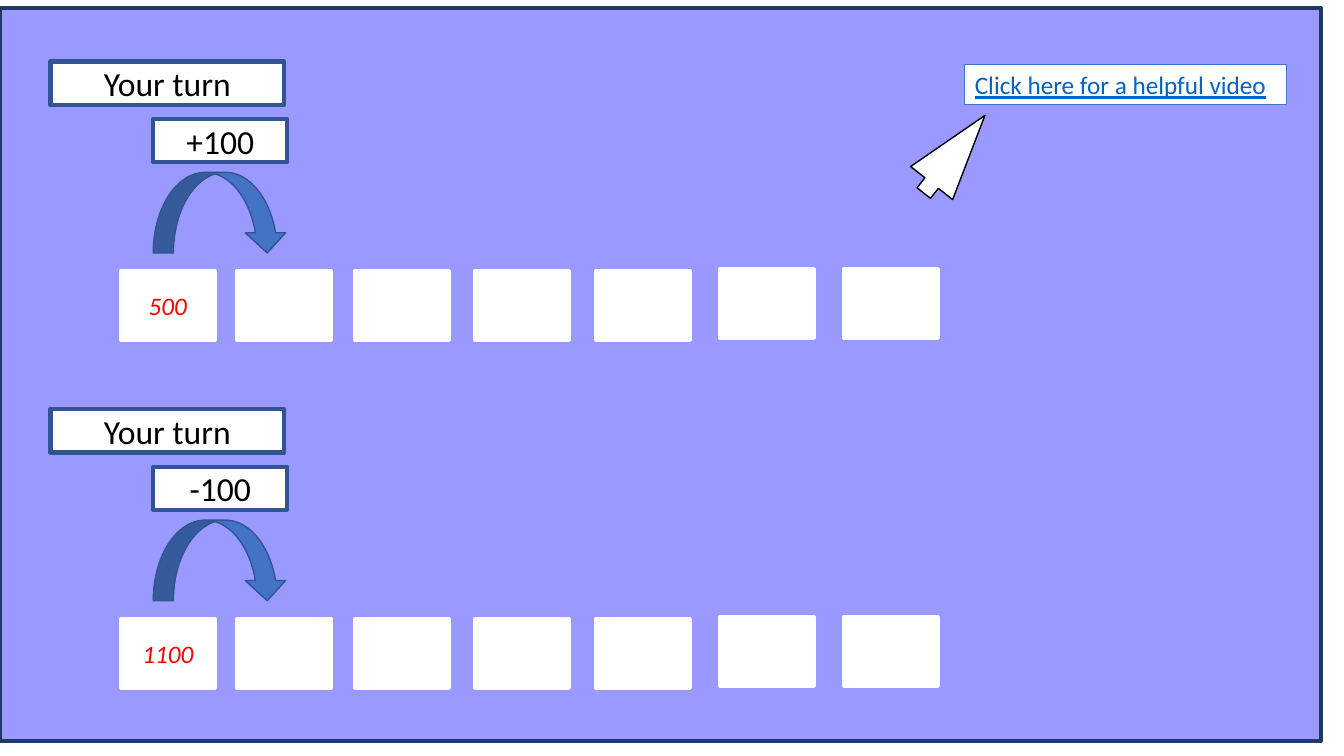
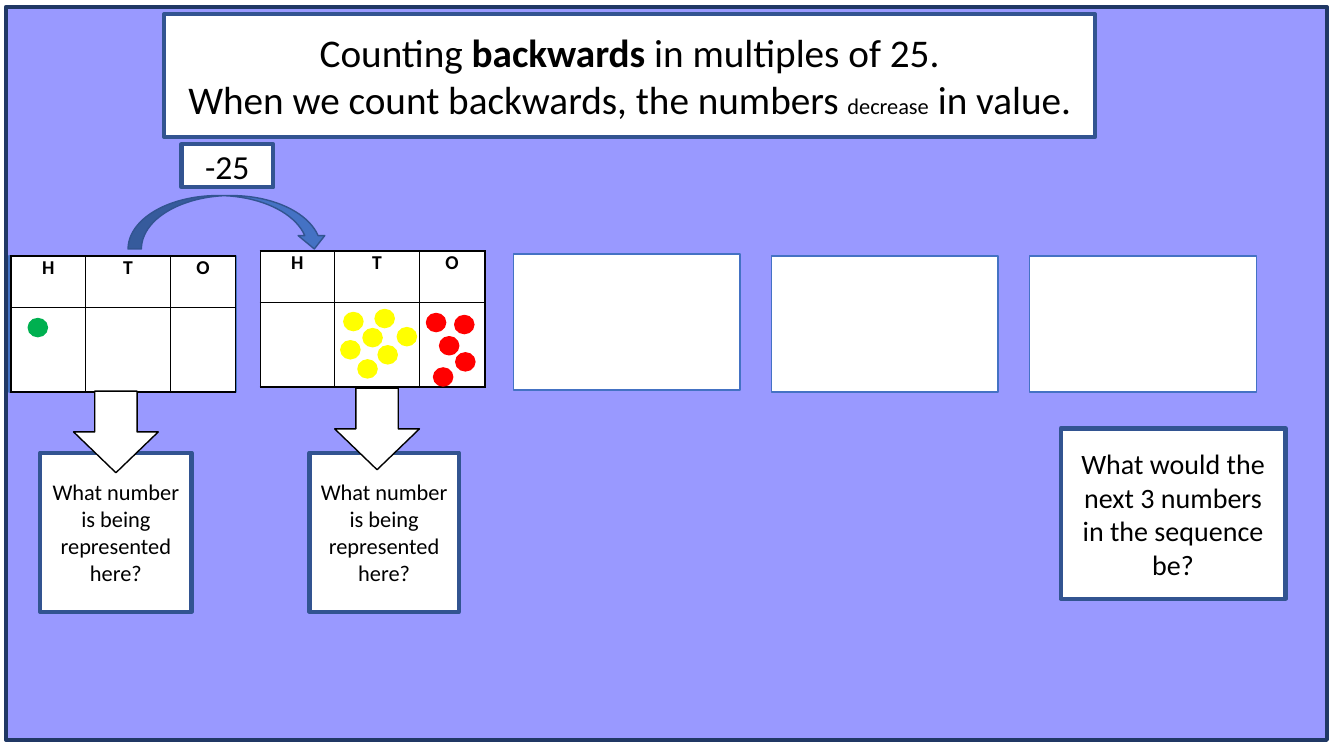
"""Build two slides on counting in steps, with boxes, arrows and place value charts."""
import pptx
import pptx.dml.color
import pptx.enum.shapes
import pptx.enum.text
import pptx.oxml
import pptx.oxml.ns
import pptx.util

Inches = pptx.util.Inches
Pt = pptx.util.Pt
Kind = pptx.enum.shapes.MSO_SHAPE
Align = pptx.enum.text.PP_ALIGN
Anchor = pptx.enum.text.MSO_ANCHOR
Size = pptx.enum.text.MSO_AUTO_SIZE


class Deck:
    """Hold the style and the current slide."""

    font = "Calibri"
    hues = {
        "back": "9999FF", "frame": "203864", "edge": "325491", "blue": "4472C4",
        "white": "FFFFFF", "black": "000000", "red": "FF0000", "yellow": "FFFF00",
        "green": "00B050", "link": "0563C1",
    }

    def __init__(self):
        self.show = pptx.Presentation()
        self.show.slide_width = Inches(13.33)
        self.show.slide_height = Inches(7.5)
        self.page = None

    def hue(self, name):
        return pptx.dml.color.RGBColor.from_string(self.hues[name])

    def slide(self, left, top, titled=False):
        layout = self.show.slide_layouts[5 if titled else 6]
        self.page = self.show.slides.add_slide(layout)
        self.shape(Kind.RECTANGLE, (left, top, 13.1, 7.27), "back", "frame", 3)

    def paint(self, item, fill, line, width):
        item.fill.solid()
        item.fill.fore_color.rgb = self.hue(fill)
        item.line.color.rgb = self.hue(line)
        item.line.width = Pt(width)

    def shape(self, kind, at, fill, line, width=1):
        item = self.page.shapes.add_shape(kind, *map(Inches, at))
        item.shadow.inherit = False
        self.paint(item, fill, line, width)
        return item

    def text(self, para, runs, size, color="black", align=Align.CENTER):
        para.alignment = align
        for words, look in runs:
            run = para.add_run()
            run.text = words
            font = run.font
            font.name = self.font
            font.size = Pt(look.get("size", size))
            font.bold = look.get("bold", False)
            font.italic = look.get("italic", False)
            font.underline = look.get("under", False)
            font.color.rgb = self.hue(color)

    def box(self, at, words="", size=24, line="edge", width=3, color="black", **look):
        item = self.shape(Kind.RECTANGLE, at, "white", line, width)
        if words:
            item.text_frame.word_wrap = True
            self.text(item.text_frame.paragraphs[0], [(words, look)], size, color)
        return item

    def title(self, at, lines, size):
        item = self.page.shapes.title
        self.page.shapes._spTree.append(item._element)
        item.left, item.top, item.width, item.height = map(Inches, at)
        self.paint(item, "white", "edge", 3)
        frame = item.text_frame
        frame.auto_size = Size.NONE
        frame.word_wrap = True
        frame.vertical_anchor = Anchor.MIDDLE
        for spot, runs in enumerate(lines):
            para = frame.add_paragraph() if spot else frame.paragraphs[0]
            self.text(para, runs, size)

    def link(self, at, words):
        item = self.box(at, line="blue", width=0.75)
        frame = item.text_frame
        frame.word_wrap = False
        frame.vertical_anchor = Anchor.TOP
        self.text(frame.paragraphs[0], [(words, {"under": True})], 18, "link", Align.LEFT)

    def hop(self, at, label, words):
        self.shape(Kind.CURVED_DOWN_ARROW, at, "blue", "edge")
        self.box(label, words)

    def arrow(self, at, turn=0, adjust=()):
        item = self.shape(Kind.DOWN_ARROW, at, "white", "black")
        item.rotation = turn
        for spot, value in enumerate(adjust):
            item.adjustments[spot] = value

    def border(self, cell):
        props = cell._tc.get_or_add_tcPr()
        space = pptx.oxml.ns.nsdecls("a")
        for spot, side in enumerate(("lnL", "lnR", "lnT", "lnB")):
            props.insert(spot, pptx.oxml.parse_xml(
                f'<a:{side} {space} w="12700"><a:solidFill>'
                f'<a:srgbClr val="{self.hues["black"]}"/></a:solidFill></a:{side}>'))

    def chart(self, left, top):
        grid = self.page.shapes.add_table(
            2, 3, *map(Inches, (left, top, 2.23, 1.35))).table
        grid.first_row = grid.horz_banding = False
        for col, width in zip(grid.columns, (0.74, 0.84, 0.65)):
            col.width = Inches(width)
        for row, height in zip(grid.rows, (0.51, 0.84)):
            row.height = Inches(height)
        for cell in grid.iter_cells():
            cell.fill.solid()
            cell.fill.fore_color.rgb = self.hue("white")
            self.border(cell)
        for cell, head in zip(grid.rows[0].cells, "HTO"):
            cell.margin_left = cell.margin_right = 0
            cell.margin_top = cell.margin_bottom = 0
            self.text(cell.text_frame.paragraphs[0], [(head, {"bold": True})], 14)

    def dots(self, color, spots):
        for left, top in spots:
            self.shape(Kind.OVAL, (left, top, 0.19, 0.18), color, color)


def turns(deck):
    deck.slide(0, 0.08)
    for top, step, start in ((0.61, "+100", "500"), (4.06, "-100", "1100")):
        deck.hop((1.52, top + 1.1, 1.33, 0.8), (1.52, top + 0.57, 1.33, 0.43), step)
        deck.box((0.5, top, 2.32, 0.43), "Your turn")
        for spot, left in enumerate((1.2, 2.35, 3.52, 4.71, 5.91, 7.14, 8.37)):
            drop = 2.06 if spot > 4 else 2.08
            deck.box((left, top + drop, 0.93, 0.68), "" if spot else start,
                     18, "white", color="red", italic=True)
    deck.link((9.57, 0.64, 3.19, 0.4), "Click here for a helpful video")
    deck.arrow((9.2, 1.04, 0.53, 0.98), 218.2, (0.32, 1.61))


def values(deck):
    deck.slide(0.06, 0.07, titled=True)
    deck.title((1.63, 0.14, 9.23, 1.22), (
        [("Counting ", {}), ("backwards", {"bold": True}), (" in multiples of 25.", {})],
        [("When we count backwards, the numbers ", {}), ("decrease", {"size": 16}),
         (" in value.", {})]), 28)
    for left, top in ((0.09, 2.54), (5.09, 2.52), (7.65, 2.54), (10.21, 2.54)):
        deck.box((left, top, 2.25, 1.35), line="blue", width=1)
    for left, top in ((0.11, 2.54), (2.58, 2.49)):
        deck.chart(left, top)
    for left, width, tip, top in ((0.4, 1.5, 0.73, 3.88), (3.07, 1.48, 3.32, 3.85)):
        deck.box((left, 4.49, width, 1.58), "What number is being represented here?", 16)
        deck.arrow((tip, top, 0.84, 0.81))
    deck.box((10.52, 4.25, 2.23, 1.69),
             "What would the next 3 numbers in the sequence be?", 20)
    deck.dots("green", [(0.28, 3.16)])
    deck.dots("yellow", [(3.41, 3.1), (3.75, 3.43), (3.38, 3.38), (3.55, 3.57),
                         (3.72, 3.07), (3.94, 3.25), (3.6, 3.26)])
    deck.dots("red", [(4.51, 3.13), (4.36, 3.34), (4.52, 3.5), (4.3, 3.65), (4.23, 3.11)])
    deck.hop((1.27, 1.94, 1.98, 0.53), (1.8, 1.43, 0.91, 0.43), "-25")


def main():
    deck = Deck()
    turns(deck)
    values(deck)
    deck.show.save("out.pptx")


if __name__ == "__main__":
    main()
